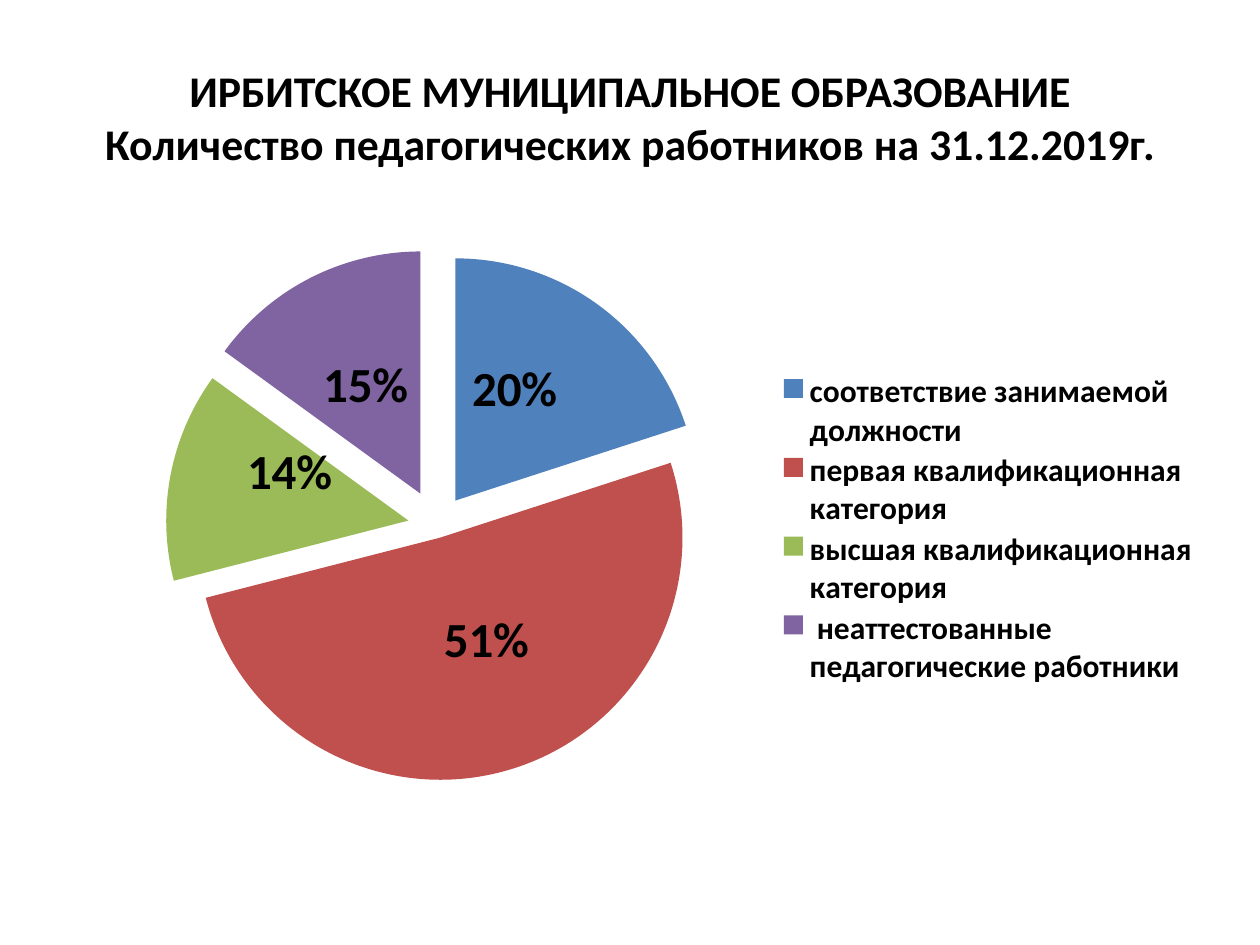
from dataclasses import dataclass

from lxml import etree
from pptx import Presentation
from pptx.chart.data import CategoryChartData
from pptx.dml.color import RGBColor
from pptx.enum.chart import XL_CHART_TYPE, XL_LABEL_POSITION, XL_LEGEND_POSITION
from pptx.enum.text import MSO_ANCHOR, PP_ALIGN
from pptx.oxml.ns import qn
from pptx.util import Cm, Pt

PIE = XL_CHART_TYPE.PIE_EXPLODED
LABEL_CENTER = XL_LABEL_POSITION.CENTER
LEGEND_RIGHT = XL_LEGEND_POSITION.RIGHT
MIDDLE = MSO_ANCHOR.MIDDLE
CENTER = PP_ALIGN.CENTER


@dataclass(frozen=True)
class Theme:
    """Typeface, colours and type sizes of the slide."""
    typeface: str = "Calibri"
    text: str = "000000"
    title_size: int = 25
    chart_size: int = 10
    legend_size: int = 18
    label_size: int = 28


@dataclass(frozen=True)
class Category:
    """One pie slice: share, colour, explosion in percent and label offset."""
    name: str
    share: float
    color: str
    explosion: int
    label_shift: tuple


THEME = Theme()
TITLE = "ИРБИТСКОЕ МУНИЦИПАЛЬНОЕ ОБРАЗОВАНИЕ\nКоличество педагогических работников на 31.12.2019г."
CATEGORIES = (
    Category("соответствие занимаемой должности", 0.20, "4F81BD", 13, (-0.01, -0.02)),
    Category("первая квалификационная категория", 0.51, "C0504D", 5, (0.01, -0.02)),
    Category("высшая квалификационная категория", 0.14, "9BBB59", 12, (0, -0.04)),
    Category(" неаттестованные педагогические работники", 0.15, "8064A2", 15, (0, 0)),
)


def style_font(font, size, bold=True):
    """Apply the theme typeface and text colour at the given size."""
    font.name = THEME.typeface
    font.size = Pt(size)
    font.bold = bold
    font.color.rgb = RGBColor.from_string(THEME.text)


def build_layout(**settings):
    """Return a manual chart layout holding the given settings in order."""
    layout = etree.Element(qn("c:layout"))
    manual = etree.SubElement(layout, qn("c:manualLayout"))
    for tag, value in settings.items():
        etree.SubElement(manual, qn(f"c:{tag}"), val=str(value))
    return layout


def set_layout(parent, predecessor, **settings):
    """Replace the layout of a chart part, after its predecessor if it has one."""
    for old in parent.findall(qn("c:layout")):
        parent.remove(old)
    layout = build_layout(**settings)
    if predecessor is None:
        parent.insert(0, layout)
    else:
        predecessor.addnext(layout)


def add_title(slide, left, top, width, height):
    """Place the centred two-line title in its box."""
    frame = slide.shapes.add_textbox(left, top, width, height).text_frame
    frame.word_wrap = True
    frame.vertical_anchor = MIDDLE
    heading = frame.paragraphs[0]
    heading.text = TITLE
    heading.alignment = CENTER
    for run in heading.runs:
        style_font(run.font, THEME.title_size)


def style_slice(point, category):
    """Colour and explode one slice and place its label."""
    point.format.fill.solid()
    point.format.fill.fore_color.rgb = RGBColor.from_string(category.color)
    point.format.line.fill.background()
    label = point.data_label
    style_font(label.font, THEME.label_size)
    label.position = LABEL_CENTER


def add_staff_chart(slide, left, top, width, height):
    """Place the exploded pie and its legend in the given box."""
    data = CategoryChartData(number_format="0%")
    data.categories = [category.name for category in CATEGORIES]
    data.add_series("Series 1", [category.share for category in CATEGORIES])
    chart = slide.shapes.add_chart(PIE, left, top, width, height, data).chart
    chart.has_title = False
    style_font(chart.font, THEME.chart_size, bold=False)

    plot = chart.plots[0]
    plot.vary_by_categories = True
    staff = plot.series[0]
    labels = staff.data_labels
    labels.show_value = True
    labels.show_percentage = False
    labels.number_format = "0%"
    labels.number_format_is_linked = False
    style_font(labels.font, THEME.label_size)
    for index, category in enumerate(CATEGORIES):
        style_slice(staff.points[index], category)

    series_xml = plot.series[0].format.line and chart.element.find(f".//{qn('c:ser')}")
    for explosion in series_xml.findall(qn("c:explosion")):
        series_xml.remove(explosion)
    for slice_xml, category in zip(series_xml.findall(qn("c:dPt")), CATEGORIES):
        for old in slice_xml.findall(qn("c:explosion")):
            slice_xml.remove(old)
        explosion = etree.Element(qn("c:explosion"), val=str(category.explosion))
        slice_xml.find(qn("c:spPr")).addprevious(explosion)
    for label_xml, category in zip(series_xml.iter(qn("c:dLbl")), CATEGORIES):
        shift_x, shift_y = category.label_shift
        set_layout(label_xml, label_xml.find(qn("c:idx")), x=shift_x, y=shift_y)

    chart.has_legend = True
    legend = chart.legend
    legend.position = LEGEND_RIGHT
    legend.include_in_layout = False
    style_font(legend.font, THEME.legend_size)
    legend_xml = chart.element.find(f".//{qn('c:legend')}")
    set_layout(legend_xml, legend_xml.find(qn("c:legendPos")),
               xMode="edge", yMode="edge", x=0.61, y=0.25, w=0.37, h=0.51)
    set_layout(chart.element.find(f".//{qn('c:plotArea')}"), None,
               layoutTarget="inner", xMode="edge", yMode="edge",
               x=0.14, y=0.11, w=0.4, h=0.78)


def main():
    """Build and save the slide."""
    deck = Presentation()
    deck.slide_width, deck.slide_height = Cm(25.4), Cm(19.05)
    slide = deck.slides.add_slide(deck.slide_layouts[6])
    add_title(slide, Cm(1.27), Cm(0.76), Cm(22.86), Cm(3.18))
    add_staff_chart(slide, Cm(0.51), Cm(4.32), Cm(24.41), Cm(12.57))
    deck.save("out.pptx")


if __name__ == "__main__":
    main()
